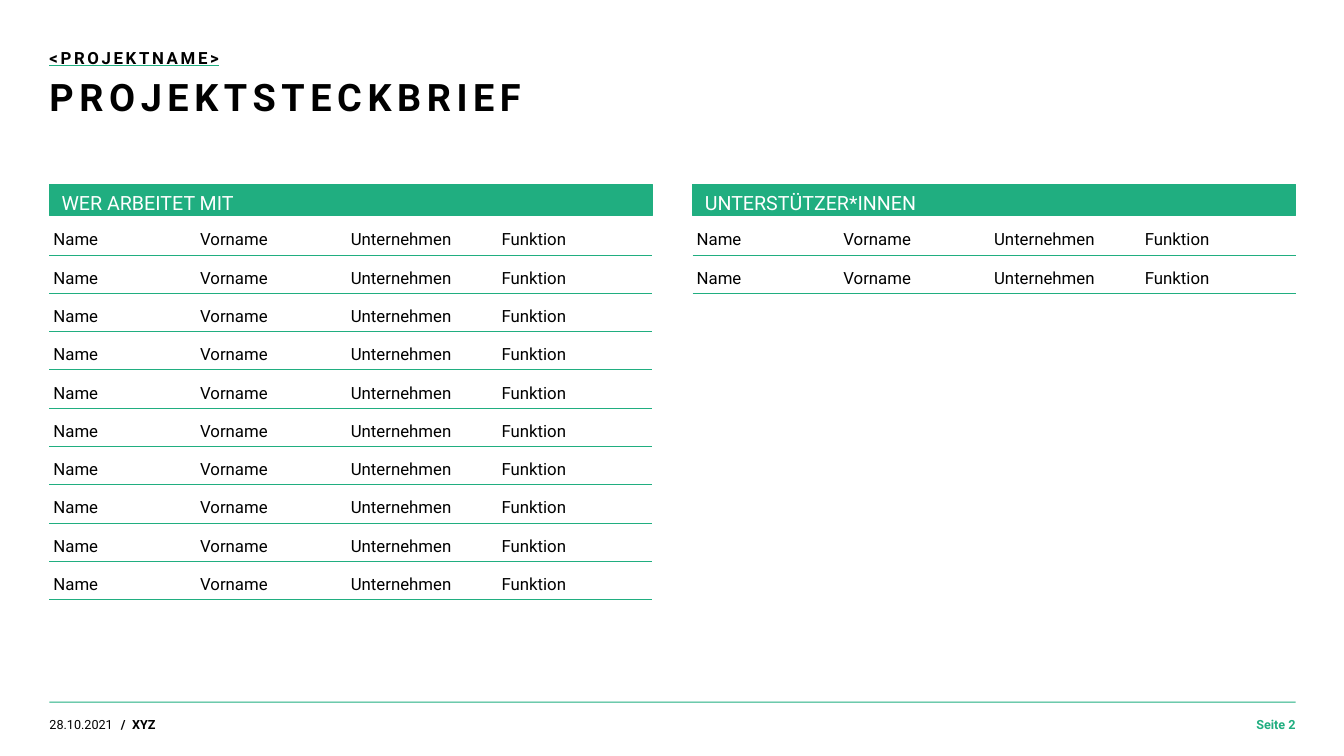
from pptx import Presentation
from pptx.dml.color import RGBColor
from pptx.enum.shapes import MSO_SHAPE as Shape
from pptx.enum.text import MSO_ANCHOR as Anchor, PP_ALIGN as Align
from pptx.oxml import parse_xml
from pptx.oxml.ns import nsdecls
from pptx.util import Inches, Pt

GREEN, BLACK, WHITE = "20AE80", "000000", "FFFFFF"
NO_STYLE = "{2D5ABB26-0587-4C30-8999-92F81FD0307C}"
LEFT, RIGHT, GUTTER = 0.49, 12.85, 0.4
PANEL_WIDTH = (RIGHT - LEFT - GUTTER) / 2
PANEL_TOP, BAR_HEIGHT = 1.83, 0.31
TABLE_TOP, ROW_HEIGHT = 2.15, 0.38
COLUMNS = ["Name", "Vorname", "Unternehmen", "Funktion"]


def color(value):
    return RGBColor.from_string(value)


def write(frame, text, size, ink=BLACK, bold=False, margins=(0, 0, 0, 0)):
    frame.word_wrap = True
    frame.margin_left, frame.margin_top, frame.margin_right, frame.margin_bottom = map(Inches, margins)
    para = frame.paragraphs[0]
    para.text = text
    para.alignment = Align.LEFT
    para.space_before = Pt(0)
    para.font.name = "Roboto"
    para.font.size = Pt(size)
    para.font.bold = bold
    para.font.color.rgb = color(ink)
    return para


deck = Presentation()
deck.slide_width, deck.slide_height = Inches(13.33), Inches(7.5)
page = deck.slides.add_slide(deck.slide_layouts[2])

# Title and project name
headings = [
    (page.shapes.title, "PROJEKTSTECKBRIEF", 0.78, 0.41, 27, 400),
    (page.placeholders[1], "<PROJEKTNAME>", 0.47, 0.2, 12, 190),
]
for box, text, top, height, size, spacing in headings:
    box.left, box.top, box.width, box.height = map(Inches, (LEFT, top, 11.06, height))
    para = write(box.text_frame, text, size, bold=True)
    box.text_frame.vertical_anchor = Anchor.TOP
    para.runs[0]._r.get_or_add_rPr().set("spc", str(spacing))
page.shapes.title.text_frame.paragraphs[0].line_spacing = Pt(29)

# Green underline of the project name
span = para.runs[0]
span.font.underline = True
span._r.get_or_add_rPr().append(parse_xml(
    f'<a:uFill {nsdecls("a")}><a:solidFill><a:srgbClr val="{GREEN}"/></a:solidFill></a:uFill>'))

# Two panels: heading bar above a table of people
for index, (heading, row_count) in enumerate([("WER ARBEITET MIT", 10), ("UNTERSTÜTZER*INNEN", 2)]):
    left = LEFT + index * (PANEL_WIDTH + GUTTER)

    grid = page.shapes.add_table(row_count, len(COLUMNS), Inches(left), Inches(TABLE_TOP),
                                 Inches(PANEL_WIDTH), Inches(row_count * ROW_HEIGHT)).table
    grid.first_row = grid.horz_banding = False
    grid._tbl.tblPr[0].text = NO_STYLE
    for row in grid.rows:
        for column, (cell, label) in enumerate(zip(row.cells, COLUMNS)):
            para = write(cell.text_frame, label, 12)
            para.line_spacing = Pt(20)
            para.space_before = Pt(4)
            cell.margin_left = Inches(0.04 if column == 0 else 0)
            cell.margin_right = 0
            cell.vertical_anchor = Anchor.MIDDLE
            cell.fill.background()
            cell._tc.get_or_add_tcPr().insert(0, parse_xml(
                f'<a:lnB {nsdecls("a")} w="9525"><a:solidFill><a:srgbClr val="{GREEN}"/>'
                '</a:solidFill></a:lnB>'))

    bar = page.shapes.add_shape(Shape.RECTANGLE, Inches(left), Inches(PANEL_TOP),
                                Inches(PANEL_WIDTH), Inches(BAR_HEIGHT))
    bar.shadow.inherit = False
    bar.fill.solid()
    bar.fill.fore_color.rgb = bar.line.color.rgb = color(GREEN)
    bar.line.width = Pt(1)
    para = write(bar.text_frame, heading, 14, WHITE, margins=(0.12, 0.08, 0.12, 0.08))
    para.line_spacing = Pt(20)
    para.space_before = Pt(4)
    bar.text_frame.vertical_anchor = Anchor.MIDDLE

# Footer rule
rule = page.shapes.add_shape(Shape.RECTANGLE, Inches(LEFT), Inches(6.96),
                             Inches(RIGHT - LEFT), Inches(0.01))
rule.shadow.inherit = False
rule.fill.solid()
rule.fill.fore_color.rgb = color(GREEN)
rule.line.fill.background()

# Footer: date, author, page number
footers = [
    ("28.10.2021", LEFT, 0.71, BLACK, False, Align.LEFT),
    ("/\tXYZ", 1.2, 10.82, BLACK, True, Align.LEFT),
    ("Seite 2", 12.16, 0.69, GREEN, True, Align.RIGHT),
]
for text, left, width, ink, bold, align in footers:
    box = page.shapes.add_textbox(Inches(left), Inches(7.11), Inches(width), Inches(0.15))
    box.text_frame.vertical_anchor = Anchor.MIDDLE
    if "\t" in text:
        box.text_frame.paragraphs[0]._p.get_or_add_pPr().append(parse_xml(
            f'<a:tabLst {nsdecls("a")}><a:tab pos="{Inches(0.11)}" algn="l"/></a:tabLst>'))
    write(box.text_frame, text, 9, ink, bold).alignment = align

deck.save("out.pptx")
